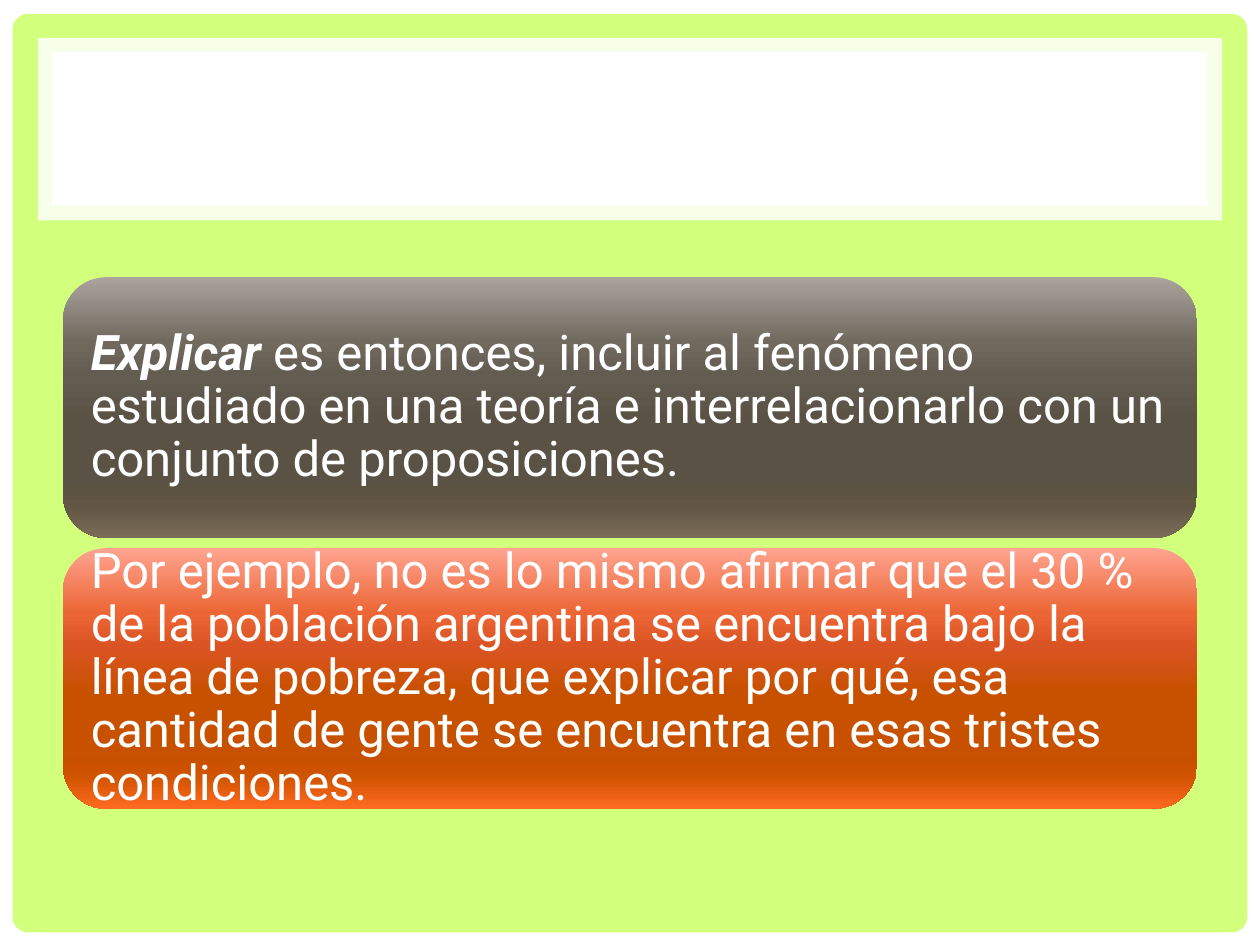
import pptx
import pptx.util
import pptx.oxml
import pptx.oxml.ns
import pptx.dml.color
import pptx.enum.shapes
import pptx.enum.text

SHAPES = pptx.enum.shapes.MSO_SHAPE
WIDTH, HEIGHT = 10, 7.5
GREEN, WHITE = "D2FF7C", "FFFFFF"

# Content: runs of (text, format) and gradient colours for each card
EMPHASIS = {"bold": True, "italic": True}
CARDS = [
    {"runs": [("Explicar ", EMPHASIS),
              ("es entonces, incluir al fenómeno estudiado en una teoría e "
               "interrelacionarlo con un conjunto de proposiciones.", {})],
     "colors": ["AAA49D", "70695E", "635C51", "5A5245", "5C5242", "625644", "7A6C58"]},
    {"runs": [("Por ejemplo, no es lo mismo afirmar que el 30 % de la población "
               "argentina se encuentra bajo la línea de pobreza, que explicar por "
               "qué, esa cantidad de gente se encuentra en esas tristes condiciones.", {})],
     "colors": ["FFA490", "EC6635", "DA5423", "C85100", "C65000", "D15400", "FF6A22"]},
]
STOPS = [0, 25, 38, 55, 80, 88, 100]

# Frame panels from back to front: preset, left, top, width, height, colour, opacity %
PANELS = [
    (SHAPES.RECTANGLE, 0, 0, WIDTH, HEIGHT, WHITE, 100),
    (SHAPES.ROUNDED_RECTANGLE, 0.1, 0.11, 9.8, 7.29, GREEN, 100),
    (SHAPES.RECTANGLE, 0.3, 0.3, 9.4, 1.45, WHITE, 83),
    (SHAPES.RECTANGLE, 0.41, 0.41, 9.17, 1.22, WHITE, 100),
]
CARD_LEFT, CARD_TOP, CARD_WIDTH, CARD_HEIGHT, CARD_GAP = 0.5, 2.2, 9, 2.07, 0.08
CARD_MARGIN = 0.12


def set_color(target, color):
    target.rgb = pptx.dml.color.RGBColor.from_string(color)


def add_shape(slide, preset, *box):
    shape = slide.shapes.add_shape(preset, *map(pptx.util.Inches, box))
    shape.shadow.inherit = False
    shape.line.fill.background()
    return shape


def fill_solid(shape, color, opacity):
    shape.fill.solid()
    set_color(shape.fill.fore_color, color)
    if opacity < 100:
        color_element = shape.fill._xPr.find(".//" + pptx.oxml.ns.qn("a:srgbClr"))
        color_element.append(pptx.oxml.parse_xml(
            f'<a:alpha {pptx.oxml.ns.nsdecls("a")} val="{opacity * 1000}"/>'))


def fill_gradient(shape, colors):
    shape.fill.gradient()
    shape.fill.gradient_angle = 270  # top to bottom
    stop_list = shape.fill._xPr.find(".//" + pptx.oxml.ns.qn("a:gsLst"))
    for stop in list(stop_list):
        stop_list.remove(stop)
    for position, color in zip(STOPS, colors):
        stop_list.append(pptx.oxml.parse_xml(
            f'<a:gs {pptx.oxml.ns.nsdecls("a")} pos="{position * 1000}">'
            f'<a:srgbClr val="{color}"/></a:gs>'))


def write_text(shape, runs):
    frame = shape.text_frame
    margin = pptx.util.Inches(CARD_MARGIN)
    frame_format = {"word_wrap": True,
                    "vertical_anchor": pptx.enum.text.MSO_ANCHOR.MIDDLE,
                    "margin_left": margin, "margin_right": margin,
                    "margin_top": margin, "margin_bottom": margin}
    for name, value in frame_format.items():
        setattr(frame, name, value)
    paragraph = frame.paragraphs[0]
    paragraph.alignment = pptx.enum.text.PP_ALIGN.LEFT
    paragraph.line_spacing = 0.9
    for text, emphasis in runs:
        run = paragraph.add_run()
        run.text = text
        run_format = {"name": "Roboto", "size": pptx.util.Pt(28), **emphasis}
        for name, value in run_format.items():
            setattr(run.font, name, value)
        set_color(run.font.color, WHITE)


def main():
    presentation = pptx.Presentation()
    presentation.slide_width = pptx.util.Inches(WIDTH)
    presentation.slide_height = pptx.util.Inches(HEIGHT)
    slide = presentation.slides.add_slide(presentation.slide_layouts[6])
    slide.background.fill.solid()
    set_color(slide.background.fill.fore_color, GREEN)

    # Frame and empty heading band
    for preset, left, top, width, height, color, opacity in PANELS:
        panel = add_shape(slide, preset, left, top, width, height)
        fill_solid(panel, color, opacity)
        if preset == SHAPES.ROUNDED_RECTANGLE:
            panel.adjustments[0] = 0.017

    # Stacked text cards
    for row, card in enumerate(CARDS):
        top = CARD_TOP + row * (CARD_HEIGHT + CARD_GAP)
        shape = add_shape(slide, SHAPES.ROUNDED_RECTANGLE,
                          CARD_LEFT, top, CARD_WIDTH, CARD_HEIGHT)
        fill_gradient(shape, card["colors"])
        write_text(shape, card["runs"])

    presentation.save("out.pptx")


if __name__ == "__main__":
    main()
